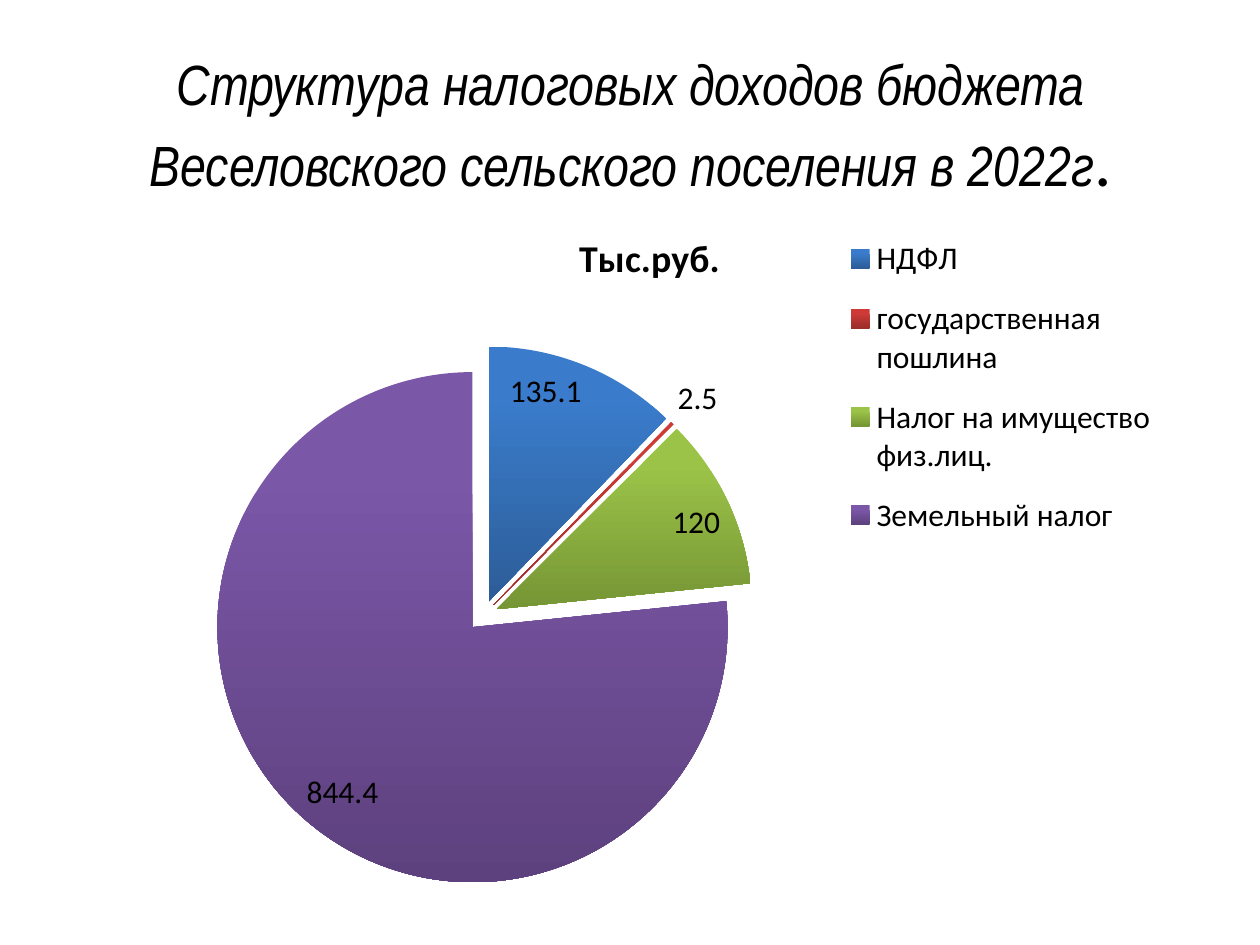
from lxml.etree import SubElement
from pptx import Presentation
from pptx.chart.data import CategoryChartData
from pptx.dml.color import RGBColor
from pptx.enum.chart import XL_CHART_TYPE, XL_LABEL_POSITION, XL_LEGEND_POSITION
from pptx.enum.text import MSO_ANCHOR, PP_ALIGN
from pptx.oxml.ns import qn
from pptx.util import Pt

COLORS = {"text": "000000"}
# category: (value, top colour, bottom colour)
TAXES = {
    "НДФЛ": (135.1, "3A7CCB", "2C5D98"),
    "государственная пошлина": (2.5, "CE3B37", "9B2D2A"),
    "Налог на имущество физ.лиц.": (120, "9BC348", "769535"),
    "Земельный налог": (844.4, "7B57A8", "5D417E"),
}


def style(font, size, name="Calibri", bold=False, italic=False):
    font.size = Pt(size)
    font.name = name
    font.bold = bold
    font.italic = italic
    font.color.rgb = RGBColor.from_string(COLORS["text"])


def add_title(s, x, y, w, h):
    tf = s.shapes.add_textbox(Pt(x), Pt(y), Pt(w), Pt(h)).text_frame
    tf.word_wrap = True
    tf.vertical_anchor = MSO_ANCHOR.MIDDLE
    p = tf.paragraphs[0]
    p.alignment = PP_ALIGN.CENTER
    r = p.add_run()
    r.text = "Структура налоговых доходов бюджета Веселовского сельского поселения в 2022г"
    style(r.font, 32.4, "Arial Narrow", italic=True)
    r = p.add_run()
    r.text = "."
    style(r.font, 39.6)


def set_layout(parent, before, x, y, w, h, inner=False):
    """Place a chart part by fractions of the chart box."""
    for old in parent.findall(qn("c:layout")):
        parent.remove(old)
    layout = SubElement(parent, qn("c:layout"))
    manual = SubElement(layout, qn("c:manualLayout"))
    values = {"xMode": "edge", "yMode": "edge", "x": x, "y": y, "w": w, "h": h}
    if inner:
        values = {"layoutTarget": "inner", **values}
    for tag, value in values.items():
        SubElement(manual, qn(f"c:{tag}")).set("val", str(value))
    parent.find(qn(before)).addprevious(layout)


def add_tax_pie(s, x, y, w, h):
    data = CategoryChartData()
    data.categories = list(TAXES)
    data.add_series("Тыс.руб.", [value for value, _, _ in TAXES.values()])
    chart = s.shapes.add_chart(
        XL_CHART_TYPE.PIE, Pt(x), Pt(y), Pt(w), Pt(h), data).chart
    style(chart.font, 18)

    chart.has_title = True
    p = chart.chart_title.text_frame.paragraphs[0]
    r = p.add_run()
    r.text = "Тыс.руб."
    style(r.font, 21.6, bold=True)

    chart.has_legend = True
    legend = chart.legend
    legend.position = XL_LEGEND_POSITION.RIGHT
    legend.include_in_layout = False
    style(legend.font, 18)
    set_layout(legend._element, "c:overlay", 0.65, 0.02, 0.31, 0.48)

    plot = chart.plots[0]
    plot.vary_by_categories = True
    set_layout(chart._chartSpace.chart.plotArea, "c:pieChart",
               0.12, 0.2, 0.47, 0.77, inner=True)

    series = plot.series[0]
    for i, (_, top, bottom) in enumerate(TAXES.values()):
        fill = series.points[i].format.fill
        fill.gradient()
        fill.gradient_angle = 270
        for stop, color, position in zip(fill.gradient_stops, (top, bottom), (0.2, 1)):
            stop.color.rgb = RGBColor.from_string(color)
            stop.position = position

    explosion = SubElement(series._element, qn("c:explosion"))
    explosion.set("val", "6")
    series._element.find(qn("c:dPt")).addprevious(explosion)
    for point in series._element.findall(qn("c:dPt")):
        exploded = SubElement(point, qn("c:explosion"))
        exploded.set("val", "6")
        point.find(qn("c:spPr")).addprevious(exploded)

    labels = series.data_labels
    labels.show_value = True
    labels.show_percentage = False
    labels.position = XL_LABEL_POSITION.INSIDE_END
    style(labels.font, 18)
    duty = list(TAXES).index("государственная пошлина")
    series.points[duty].data_label.position = XL_LABEL_POSITION.OUTSIDE_END


def main():
    prs = Presentation()
    prs.slide_width, prs.slide_height = Pt(720), Pt(540)
    s = prs.slides.add_slide(prs.slide_layouts[6])
    add_title(s, 36.5, 26, 648, 90)
    add_tax_pie(s, 42.5, 116.5, 657.5, 402.5)
    prs.save("out.pptx")


if __name__ == "__main__":
    main()
